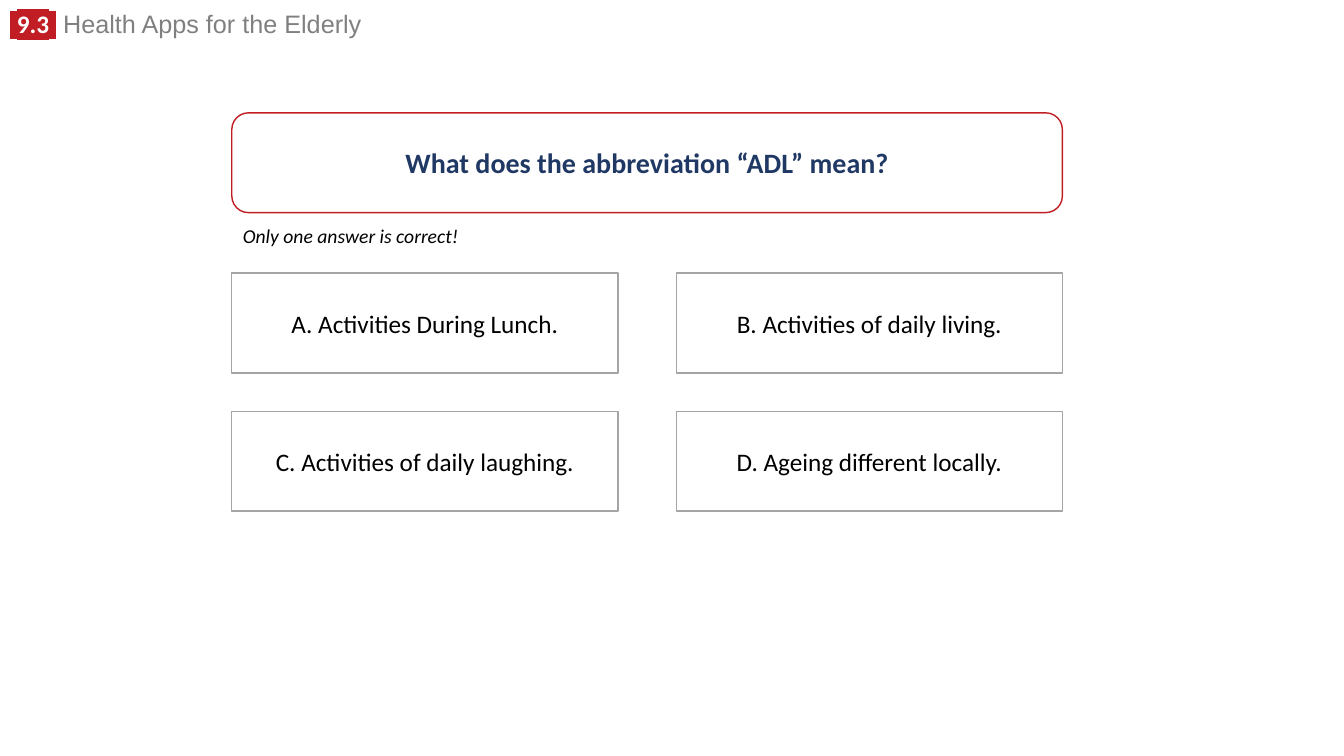
from lxml import etree
from pptx import Presentation
from pptx.dml.color import RGBColor
from pptx.enum.shapes import MSO_SHAPE
from pptx.enum.text import MSO_ANCHOR, MSO_AUTO_SIZE, PP_ALIGN
from pptx.oxml.ns import qn
from pptx.util import Pt

RECTANGLE = MSO_SHAPE.RECTANGLE
ROUNDED = MSO_SHAPE.ROUNDED_RECTANGLE
MIDDLE = MSO_ANCHOR.MIDDLE
CENTER = PP_ALIGN.CENTER
GROW = MSO_AUTO_SIZE.SHAPE_TO_FIT_TEXT

RED = "C01E24"
NAVY = "203864"
GRAY = "808080"
SILVER = "A5A5A5"
WHITE = "FFFFFF"
BLACK = "000000"


def color(value):
    return RGBColor.from_string(value)


class QuizSlide:
    body_font = "Calibri"
    title_font = "Arial"

    def __init__(self, deck):
        self.slide = deck.slides.add_slide(deck.slide_layouts[6])

    def run(self, paragraph, text, size, ink, font=body_font,
            bold=False, italic=False, highlight=None):
        run = paragraph.add_run()
        run.text = text
        run.font.size = Pt(size)
        run.font.bold = bold
        run.font.italic = italic
        run.font.color.rgb = color(ink)
        if highlight:
            marker = etree.Element(qn("a:highlight"))
            etree.SubElement(marker, qn("a:srgbClr"), val=highlight)
            run.font._element.find(qn("a:solidFill")).addnext(marker)
        run.font.name = font

    def text_box(self, left, top, width, height, wrap=True):
        box = self.slide.shapes.add_textbox(Pt(left), Pt(top), Pt(width), Pt(height))
        box.text_frame.word_wrap = wrap
        box.text_frame.auto_size = GROW
        return box.text_frame.paragraphs[0]

    def heading(self, number, title):
        line = self.text_box(0, 6.5, 685.5, 25.2)
        line.line_spacing = 0.8
        for text, font in ((" ", self.title_font), (number, self.body_font),
                           (" ", self.title_font)):
            self.run(line, text, 18, WHITE, font, bold=True, highlight=RED)
        self.run(line, f" {title}", 18, GRAY, self.title_font)

    def card(self, kind, left, top, width, height, outline, text, size, ink, bold=False):
        card = self.slide.shapes.add_shape(kind, Pt(left), Pt(top), Pt(width), Pt(height))
        card.shadow.inherit = False
        card.fill.solid()
        card.fill.fore_color.rgb = color(WHITE)
        card.line.color.rgb = color(outline)
        card.line.width = Pt(1)
        card.text_frame.word_wrap = True
        card.text_frame.vertical_anchor = MIDDLE
        paragraph = card.text_frame.paragraphs[0]
        paragraph.alignment = CENTER
        self.run(paragraph, text, size, ink, bold=bold)

    def hint(self, text, left, top, width, height):
        self.run(self.text_box(left, top, width, height, wrap=False),
                 text, 14, BLACK, italic=True)


def main():
    deck = Presentation()
    deck.slide_width = Pt(960)
    deck.slide_height = Pt(540)
    quiz = QuizSlide(deck)

    left, card_height = 165.6, 71.3
    answer_width, column_step = 275.8, 317.5
    answers_top, row_step = 195.1, 98.7

    quiz.heading("9.3", "Health Apps for the Elderly")
    quiz.card(ROUNDED, left, 80.6, column_step + answer_width, card_height, RED,
              "What does the abbreviation “ADL” mean?", 20, NAVY, bold=True)

    answers = (
        "A. Activities During Lunch.",
        "B. Activities of daily living.",
        "C. Activities of daily laughing.",
        "D. Ageing different locally.",
    )
    for index, answer in enumerate(answers):
        row, column = divmod(index, 2)
        quiz.card(RECTANGLE, left + column * column_step, answers_top + row * row_step,
                  answer_width, card_height, SILVER, answer, 18, BLACK)

    quiz.hint("Only one answer is correct!", 166.3, 156.2, 170, 24.5)
    deck.save("out.pptx")


if __name__ == "__main__":
    main()
